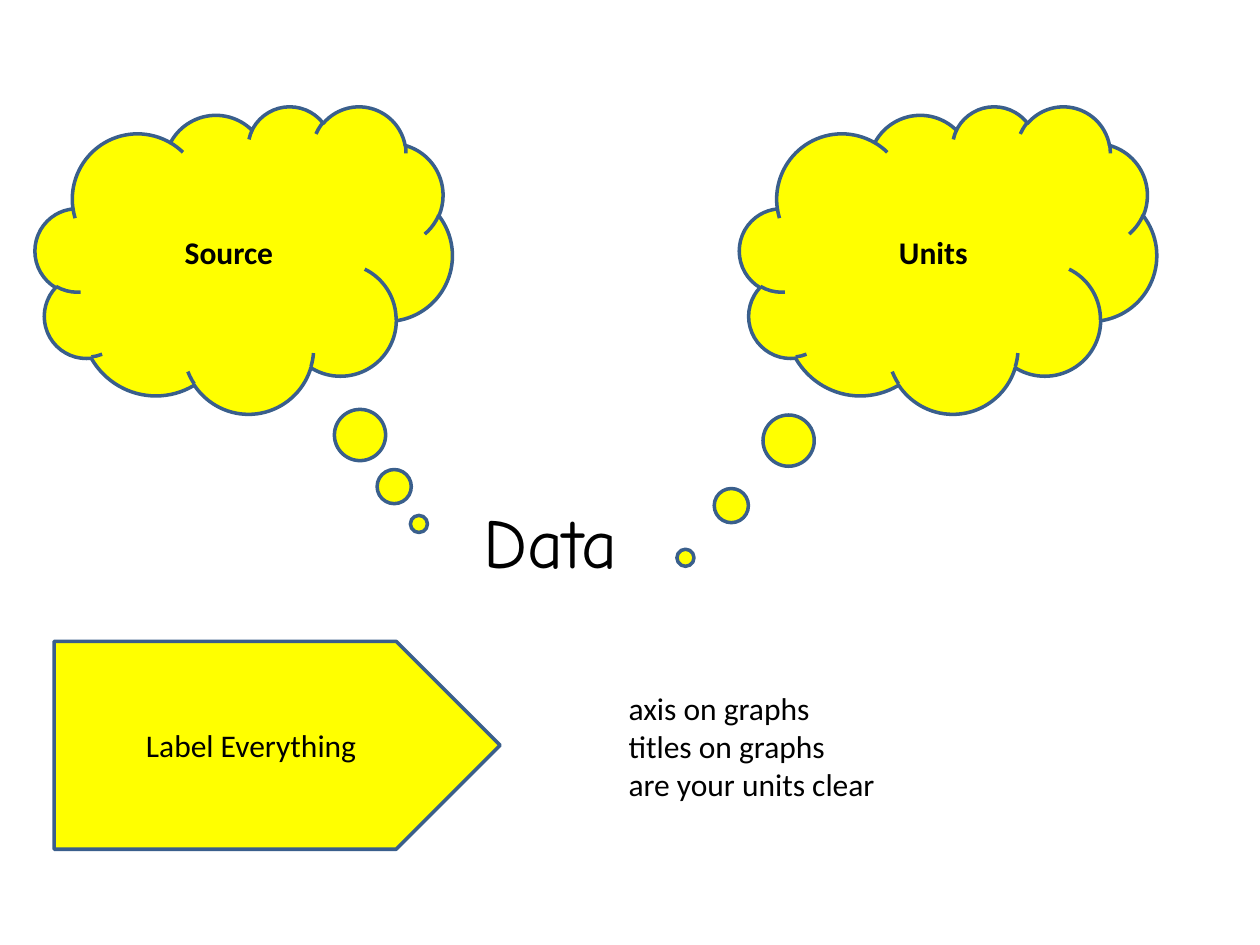
from dataclasses import dataclass
from typing import Any

from pptx import Presentation
from pptx import util as u
from pptx.dml.color import RGBColor
from pptx.enum import shapes, text

COLUMNS, ROWS = 100, 75


def colour(value):
    return RGBColor.from_string(value)


@dataclass
class Board:
    deck: Any
    slide: Any
    fill: str = "FFFF00"
    outline: str = "3A5F8C"
    ink: str = "000000"
    font: str = "Calibri"
    size: int = 18

    def place(self, left, top, width, height):
        column = self.deck.slide_width / COLUMNS
        row = self.deck.slide_height / ROWS
        return [u.Emu(round(share * unit)) for share, unit in
                ((left, column), (top, row), (width, column), (height, row))]

    def letter(self, frame, lines, align, font=None, size=None, bold=False):
        frame.text = "\n".join(lines)
        for paragraph in frame.paragraphs:
            paragraph.alignment = align
            for run in paragraph.runs:
                run.font.name = font or self.font
                run.font.size = u.Pt(size or self.size)
                run.font.bold = bold
                run.font.color.rgb = colour(self.ink)

    def note(self, lines, box, wrap=True, **style):
        frame = self.slide.shapes.add_textbox(*self.place(*box)).text_frame
        frame.word_wrap = wrap
        frame.auto_size = text.MSO_AUTO_SIZE.SHAPE_TO_FIT_TEXT
        self.letter(frame, lines, text.PP_ALIGN.LEFT, **style)

    def panel(self, preset, label, box, adjustments=(), bold=False):
        panel = self.slide.shapes.add_shape(preset, *self.place(*box))
        for index, value in enumerate(adjustments):
            panel.adjustments[index] = value
        panel.shadow.inherit = False
        panel.fill.solid()
        panel.fill.fore_color.rgb = colour(self.fill)
        panel.line.color.rgb = colour(self.outline)
        panel.line.width = u.Pt(2)
        panel.text_frame.vertical_anchor = text.MSO_ANCHOR.MIDDLE
        self.letter(panel.text_frame, [label], text.PP_ALIGN.CENTER, bold=bold)

    def thought(self, label, left, tail):
        self.panel(shapes.MSO_SHAPE.CLOUD_CALLOUT, label,
                   (left, 8.4, 33.1, 24.4), tail, bold=True)


def main():
    deck = Presentation()
    deck.slide_width, deck.slide_height = u.Inches(10), u.Inches(7.5)
    board = Board(deck, deck.slides.add_slide(deck.slide_layouts[6]))

    board.note(["Data"], (37.4, 39.1, 14.5, 7.7), wrap=False,
               font="Comic Neue", size=40)
    board.thought("Source", 2.8, (0.42, 0.86))
    board.thought("Units", 58.7, (-0.63, 0.97))
    board.panel(shapes.MSO_SHAPE.PENTAGON, "Label Everything",
                (4.3, 50.9, 35.4, 16.5))
    board.note(["axis on graphs", "titles on graphs", "are your units clear"],
               (48.9, 54.2, 34.5, 10.1))

    deck.save("out.pptx")


if __name__ == "__main__":
    main()
